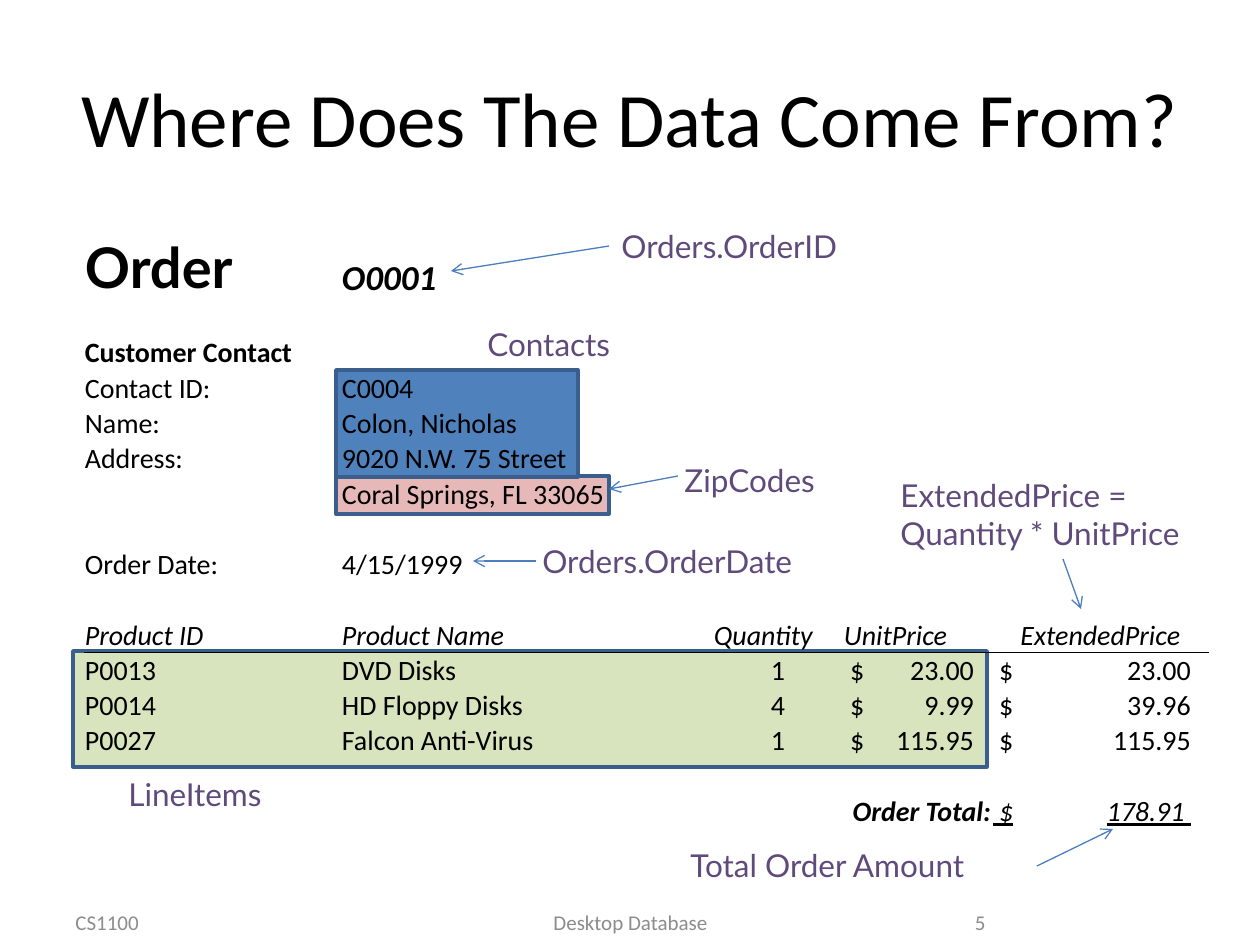
from lxml.etree import SubElement
from pptx import Presentation
from pptx.dml.color import RGBColor
from pptx.enum.shapes import MSO_CONNECTOR, MSO_SHAPE
from pptx.enum.text import MSO_ANCHOR, PP_ALIGN
from pptx.oxml import parse_xml
from pptx.oxml.ns import nsdecls, qn
from pptx.util import Emu, Pt

# Content: all lengths in px, 126 to the inch
SLIDE = (1260, 945)
LEFT, CENTER, RIGHT = PP_ALIGN.LEFT, PP_ALIGN.CENTER, PP_ALIGN.RIGHT
TITLE = dict(size=44, name="Calibri", color="000000")
FOOTER = dict(size=12, name="Calibri", color="8C8C8C")
LABEL = dict(size=18, name="Lato", color="604A7B")

HIGHLIGHTS = [  # box, fill
    ((73, 651, 914, 116), "D7E4BD"),
    ((336, 476, 273, 38), "E6B9B8"),
    ((336, 370, 242, 107), "4F81BD"),
]
FRAME_TEXTS = [  # text, box, alignment, format
    ("Where Does The Data Come From?", (63, 38, 1134, 157), CENTER, TITLE),
    ("CS1100", (63, 903, 294, 39), LEFT, FOOTER),
    ("5", (903, 903, 95, 39), RIGHT, FOOTER),
    ("Desktop Database", (431, 903, 399, 39), CENTER, FOOTER),
]
LABELS = [  # text, box
    ("Orders.OrderID", (609, 221, 273, 50)),
    ("Contacts", (475, 319, 165, 50)),
    ("ZipCodes", (672, 455, 171, 50)),
    ("Orders.OrderDate", (530, 536, 314, 50)),
    ("LineItems", (116, 769, 180, 50)),
    ("ExtendedPrice =\nQuantity * UnitPrice", (888, 470, 362, 89)),
    ("Total Order Amount", (678, 840, 359, 50)),
]
ARROWS = [  # from x, y, to x, y
    (609, 246, 451, 271),
    (678, 476, 609, 489),
    (536, 561, 473, 561),
    (1063, 559, 1081, 609),
    (1037, 866, 1113, 829),
]

# Order form: a tab sends an amount to the right edge of its column
FORM_AT = (84, 231)
COLUMNS = [257, 372, 130, 149, 217]
FIRST_ROW, ROW = 69, 35
AMOUNT_TABS = {3: 130, 4: 198}
ORDER = [
    ["Order", "O0001"],
    [],
    ["Customer Contact"],
    ["Contact ID:", "C0004"],
    ["Name:", "Colon, Nicholas"],
    ["Address:", "9020 N.W. 75 Street"],
    ["", "Coral Springs, FL 33065"],
    [],
    ["Order Date:", "4/15/1999"],
    [],
    ["Product ID", "Product Name", "Quantity", "UnitPrice", "ExtendedPrice"],
    ["P0013", "DVD Disks", "1", " $\t23.00", " $\t23.00"],
    ["P0014", "HD Floppy Disks", "4", " $\t9.99", " $\t39.96"],
    ["P0027", "Falcon Anti-Virus", "1", " $\t115.95", " $\t115.95"],
    [],
    ["", "", "Order Total:", "", " $\t178.91 "],
]
HEADER, TOTAL = 10, 15
BODY = dict(size=16, name="Calibri", color="000000")
CELL_FORMATS = {
    (0, 0): dict(size=32, name="Lato", bold=True),
    (0, 1): dict(size=20, bold=True, italic=True),
    (2, 0): dict(bold=True),
    (TOTAL, 2): dict(bold=True, italic=True),
    (TOTAL, 4): dict(italic=True, underline=True),
    **{(HEADER, c): dict(italic=True) for c in range(len(COLUMNS))},
}
CELL_ALIGN = {(HEADER, 4): CENTER, (TOTAL, 2): RIGHT,
              **{(r, 2): CENTER for r in range(HEADER + 1, TOTAL - 1)}}
NO_STYLE = "{2D5ABB26-0587-4C30-8999-92F81FD0307C}"


def px(n):
    return Emu(round(n * 914400 / 126))


def box(values):
    return [px(v) for v in values]


def rgb(color):
    return RGBColor.from_string(color)


def style(font, formats):
    for key, value in formats.items():
        if key == "color":
            font.color.rgb = rgb(value)
        else:
            setattr(font, key, Pt(value) if key == "size" else value)


def add_text(s, text, at, align, formats, anchor):
    tf = s.shapes.add_textbox(*box(at)).text_frame
    tf.word_wrap = True
    tf.vertical_anchor = anchor
    for i, line in enumerate(text.split("\n")):
        p = tf.paragraphs[0] if i == 0 else tf.add_paragraph()
        p.alignment = align
        r = p.add_run()
        r.text = line
        style(r.font, formats)


def fill_cell(cell, row, col, text):
    cell.fill.background()
    cell.vertical_anchor = MSO_ANCHOR.BOTTOM
    cell.margin_left = cell.margin_right = cell.margin_top = px(1)
    cell.margin_bottom = 0
    p = cell.text_frame.paragraphs[0]
    if not text:
        SubElement(p._p, qn("a:endParaRPr"), sz=str(BODY["size"] * 100))
        return
    p.alignment = CELL_ALIGN.get((row, col), LEFT)
    if "\t" in text:
        tabs = SubElement(p._p.get_or_add_pPr(), qn("a:tabLst"))
        SubElement(tabs, qn("a:tab"), pos=str(px(AMOUNT_TABS[col])), algn="r")
    r = p.add_run()
    r.text = text
    style(r.font, {**BODY, **CELL_FORMATS.get((row, col), {})})


def add_order(s):
    n_rows, n_cols = len(ORDER), len(COLUMNS)
    size = (sum(COLUMNS), FIRST_ROW + ROW * (n_rows - 1))
    tbl = s.shapes.add_table(n_rows, n_cols, *box(FORM_AT + size)).table
    tbl.first_row = tbl.horz_banding = False
    tbl._tbl.tblPr.find(qn("a:tableStyleId")).text = NO_STYLE
    for col, width in zip(tbl.columns, COLUMNS):
        col.width = px(width)
    for i, row in enumerate(tbl.rows):
        row.height = px(ROW if i else FIRST_ROW)
    for i, texts in enumerate(ORDER):
        for j in range(n_cols):
            fill_cell(tbl.cell(i, j), i, j, texts[j] if j < len(texts) else "")
    tbl.cell(TOTAL, 2).merge(tbl.cell(TOTAL, 3))
    # Rule under the column headings
    for j in range(n_cols):
        tbl.cell(HEADER, j)._tc.get_or_add_tcPr().insert(0, parse_xml(
            f'<a:lnB {nsdecls("a")} w="6350"><a:solidFill>'
            '<a:srgbClr val="000000"/></a:solidFill></a:lnB>'))


def main():
    prs = Presentation()
    prs.slide_width, prs.slide_height = box(SLIDE)
    s = prs.slides.add_slide(prs.slide_layouts[6])

    # Coloured areas behind the order form
    for at, color in HIGHLIGHTS:
        sp = s.shapes.add_shape(MSO_SHAPE.RECTANGLE, *box(at))
        sp.shadow.inherit = False
        sp.fill.solid()
        sp.fill.fore_color.rgb = rgb(color)
        sp.line.color.rgb = rgb("3A5F8C")
        sp.line.width = Pt(2)

    # Title, order form and footer
    add_order(s)
    for text, at, align, formats in FRAME_TEXTS:
        add_text(s, text, at, align, formats, MSO_ANCHOR.MIDDLE)

    # Data sources and their arrows
    for text, at in LABELS:
        add_text(s, text, at, LEFT, LABEL, MSO_ANCHOR.TOP)
    for ends in ARROWS:
        cx = s.shapes.add_connector(MSO_CONNECTOR.STRAIGHT, *box(ends))
        cx.line.color.rgb = rgb("4B7EBC")
        cx.line.width = Pt(0.75)
        SubElement(cx.line._get_or_add_ln(), qn("a:tailEnd"), type="arrow")
        SubElement(cx._element.spPr, qn("a:effectLst"))

    prs.save("out.pptx")


if __name__ == "__main__":
    main()
